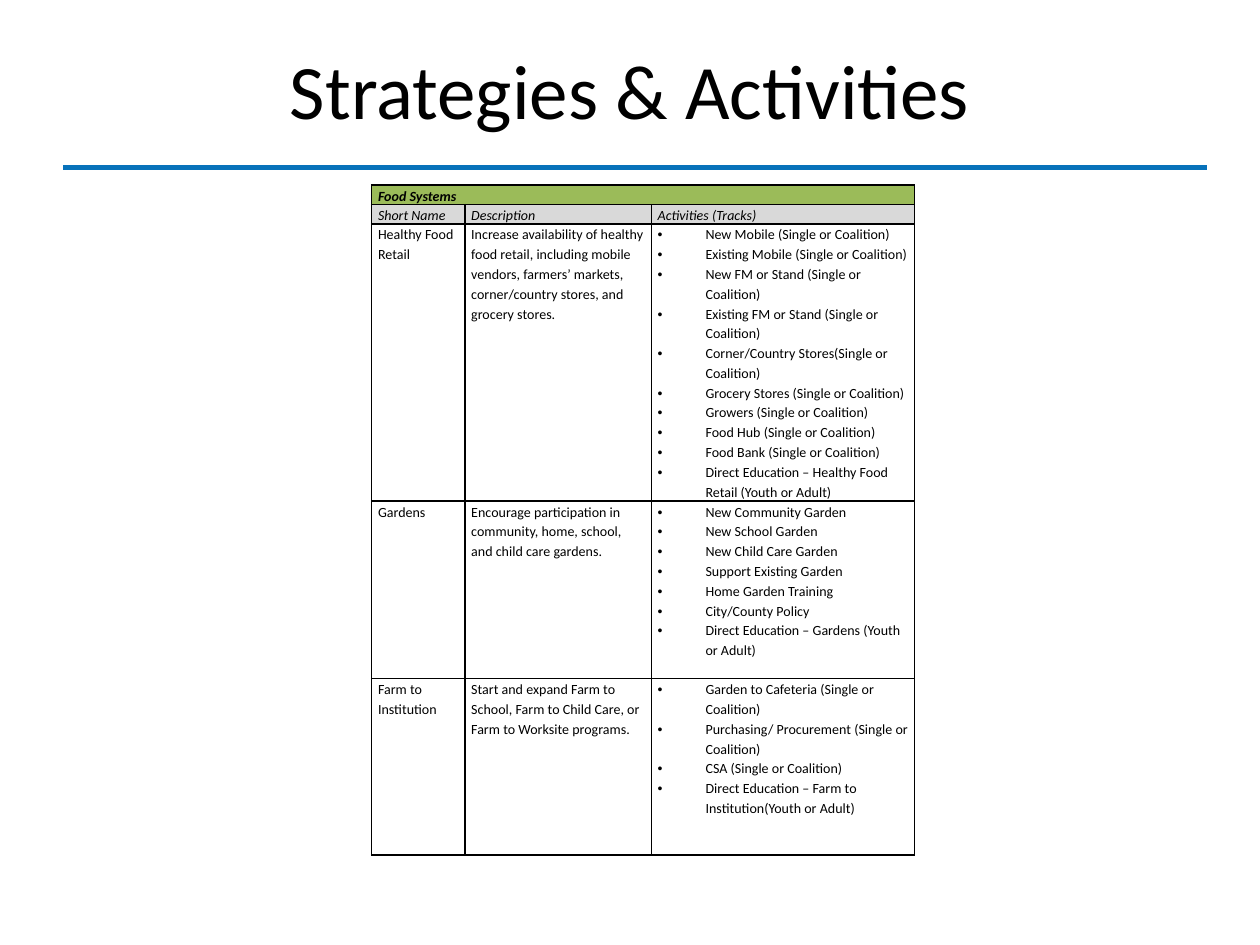
from lxml.etree import SubElement
from pptx import Presentation
from pptx.dml.color import RGBColor
from pptx.enum.shapes import MSO_CONNECTOR
from pptx.enum.text import MSO_ANCHOR, PP_ALIGN
from pptx.oxml.ns import qn
from pptx.util import Inches, Pt

# Content
TITLE = "Strategies & Activities"
SECTION = "Food Systems"
HEADINGS = ["Short Name", "Description", "Activities (Tracks)"]
STRATEGIES = [
    ("Healthy Food Retail",
     "Increase availability of healthy food retail, including mobile vendors, "
     "farmers’ markets, corner/country stores, and grocery stores.",
     ["New Mobile (Single or Coalition)",
      "Existing Mobile (Single or Coalition)",
      "New FM or Stand (Single or Coalition)",
      "Existing FM or Stand (Single or Coalition)",
      "Corner/Country Stores(Single or Coalition)",
      "Grocery Stores (Single or Coalition)",
      "Growers (Single or Coalition)",
      "Food Hub (Single or Coalition)",
      "Food Bank (Single or Coalition)",
      "Direct Education – Healthy Food Retail (Youth or Adult)"]),
    ("Gardens",
     "Encourage participation in community, home, school, and child care gardens.",
     ["New Community Garden",
      "New School Garden",
      "New Child Care Garden",
      "Support Existing Garden",
      "Home Garden Training",
      "City/County Policy",
      "Direct Education – Gardens (Youth or Adult)"]),
    ("Farm to Institution",
     "Start and expand Farm to School, Farm to Child Care, or Farm to Worksite programs.",
     ["Garden to Cafeteria (Single or Coalition)",
      "Purchasing/ Procurement (Single or Coalition)",
      "CSA (Single or Coalition)",
      "Direct Education – Farm to Institution(Youth or Adult)"]),
]

# Layout in inches
SLIDE_W, SLIDE_H = 10, 7.5
MARGIN, RULE_Y, RULE_END = 0.5, 1.33, 9.58
TABLE_LEFT, TABLE_TOP = 2.95, 1.47
COLUMNS = [0.74, 1.48, 2.09]
ROWS = [0.15, 0.15, 2.2, 1.41, 1.4]
BULLET_INDENT = 0.38

BLACK, WHITE, BLUE, GREEN, GRAY = "000000", "FFFFFF", "0772BA", "9BBB59", "D9D9D9"
BODY = {"name": "Calibri", "size": Pt(8), "bold": False, "italic": False}
HEADING = {**BODY, "italic": True}
SECTION_HEAD = {**HEADING, "bold": True}
TITLE_FORMAT = {**BODY, "size": Pt(44)}
CELL_FORMAT = {"margin_left": Inches(0.05), "margin_right": Inches(0.05),
               "margin_top": 0, "margin_bottom": 0, "vertical_anchor": MSO_ANCHOR.TOP}


def rgb(color):
    return RGBColor.from_string(color)


def apply(target, formats):
    for key, value in formats.items():
        setattr(target, key, value)


def style_font(paragraph, formats):
    apply(paragraph.font, formats)
    paragraph.font.color.rgb = rgb(BLACK)


def add_bullet(paragraph):
    properties = paragraph._p.get_or_add_pPr()
    properties.set("marL", str(Inches(BULLET_INDENT)))
    properties.set("indent", str(-Inches(BULLET_INDENT)))
    SubElement(properties, qn("a:buFont"), typeface="Arial")
    SubElement(properties, qn("a:buChar"), char="•")


def add_borders(cell):
    properties = cell._tc.get_or_add_tcPr()
    for side in ("lnL", "lnR", "lnT", "lnB"):
        border = SubElement(properties, qn(f"a:{side}"), w=str(Pt(1)))
        fill = SubElement(border, qn("a:solidFill"))
        SubElement(fill, qn("a:srgbClr"), val=BLACK)


def fill_cell(cell, content, formats, color):
    apply(cell, CELL_FORMAT)
    add_borders(cell)
    cell.fill.solid()
    cell.fill.fore_color.rgb = rgb(color)
    bulleted = isinstance(content, list)
    lines = content if bulleted else [content]
    cell.text_frame.text = "\n".join(lines)
    for paragraph in cell.text_frame.paragraphs:
        paragraph.line_spacing = 1.15
        if bulleted:
            add_bullet(paragraph)
        style_font(paragraph, formats)


def add_title(slide):
    box = slide.shapes.add_textbox(Inches(MARGIN), Inches(0.08),
                                   Inches(SLIDE_W - 2 * MARGIN), Inches(1.25))
    frame = box.text_frame
    apply(frame, {"word_wrap": True, "vertical_anchor": MSO_ANCHOR.MIDDLE, "text": TITLE})
    heading = frame.paragraphs[0]
    heading.alignment = PP_ALIGN.CENTER
    style_font(heading, TITLE_FORMAT)


def add_rule(slide):
    rule = slide.shapes.add_connector(MSO_CONNECTOR.STRAIGHT, Inches(MARGIN), Inches(RULE_Y),
                                      Inches(RULE_END), Inches(RULE_Y))
    rule.line.color.rgb = rgb(BLUE)
    rule.line.width = Pt(3)
    SubElement(rule._element.spPr, qn("a:effectLst"))


def add_strategies(slide):
    table = slide.shapes.add_table(len(ROWS), len(COLUMNS), Inches(TABLE_LEFT), Inches(TABLE_TOP),
                                   Inches(sum(COLUMNS)), Inches(sum(ROWS))).table
    for column, width in zip(table.columns, COLUMNS):
        column.width = Inches(width)
    for row, height in zip(table.rows, ROWS):
        row.height = Inches(height)

    # Section row spans all columns; headings and strategies follow
    table.cell(0, 0).merge(table.cell(0, len(COLUMNS) - 1))
    bands = [((SECTION, "", ""), SECTION_HEAD, GREEN), (HEADINGS, HEADING, GRAY)]
    bands += [(strategy, BODY, WHITE) for strategy in STRATEGIES]
    for row, (contents, formats, color) in zip(table.rows, bands):
        for cell, content in zip(row.cells, contents):
            fill_cell(cell, content, formats, color)


def main():
    deck = Presentation()
    deck.slide_width, deck.slide_height = Inches(SLIDE_W), Inches(SLIDE_H)
    slide = deck.slides.add_slide(deck.slide_layouts[6])
    add_rule(slide)
    add_title(slide)
    add_strategies(slide)
    deck.save("out.pptx")


if __name__ == "__main__":
    main()
